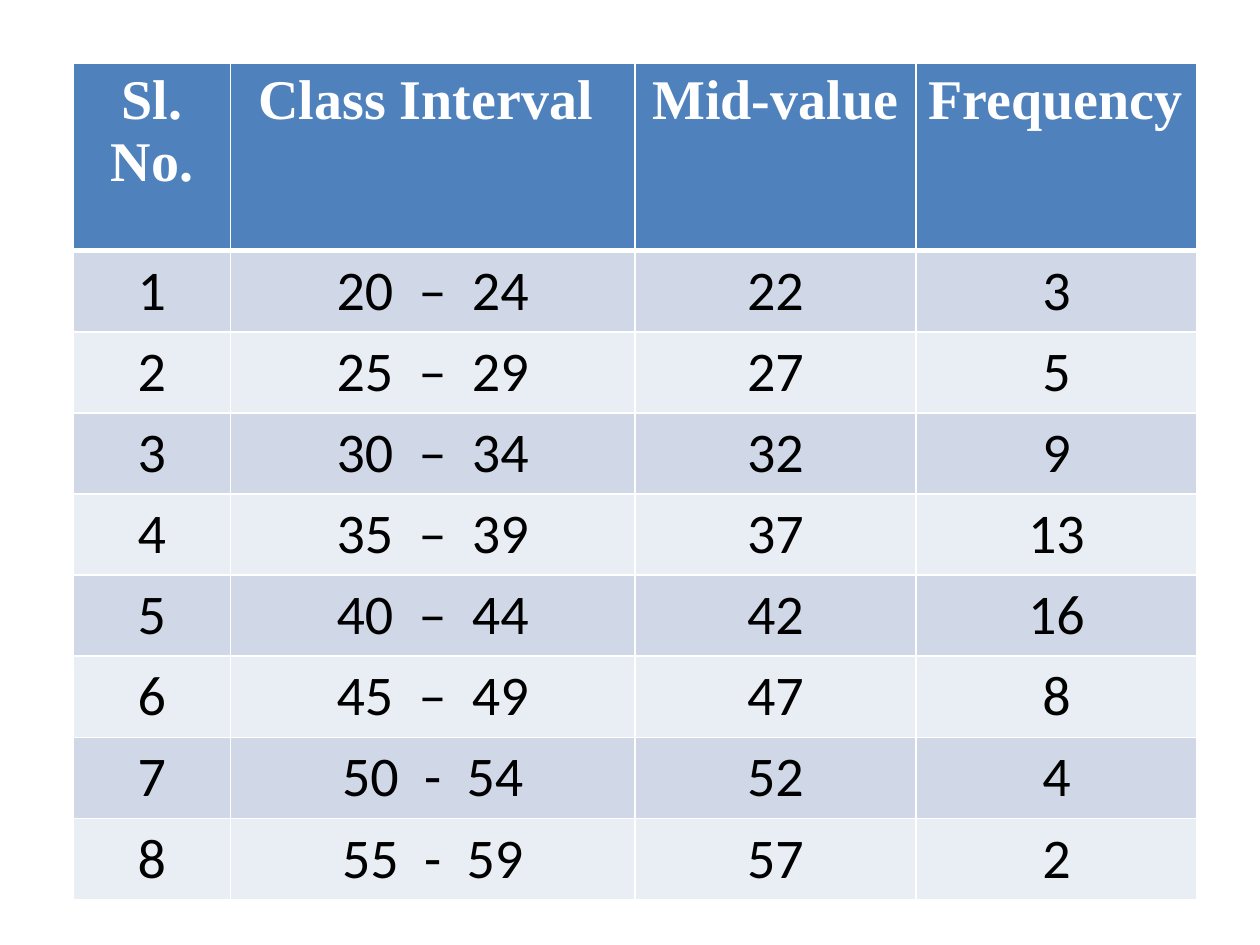
from lxml import etree
from pptx import Presentation
from pptx.dml.color import RGBColor
from pptx.enum.text import PP_ALIGN
from pptx.oxml.ns import qn
from pptx.util import Inches, Pt

CENTER, LEFT = PP_ALIGN.CENTER, PP_ALIGN.LEFT
WHITE = RGBColor(0xFF, 0xFF, 0xFF)
BLACK = RGBColor(0x00, 0x00, 0x00)
HEADER_BLUE = RGBColor(0x4F, 0x81, 0xBD)
BANDS = [RGBColor(0xD0, 0xD8, 0xE8), RGBColor(0xE9, 0xED, 0xF4)]

HEADINGS = ["Sl. No.", "Class Interval ", "Mid-value", "Frequency"]
FREQUENCIES = [3, 5, 9, 13, 16, 8, 4, 2]
FIRST_LOWER, CLASS_STEP = 20, 5
COLUMN_WIDTHS = [1.25, 3.21, 2.23, 2.23]
HEADER_HEIGHT, BODY_HEIGHT = 1.49, 0.58


def add_border(cell, side, points):
    """Draw a solid white line on one side (L, R, T or B) of a cell."""
    line = etree.SubElement(cell._tc.get_or_add_tcPr(), qn(f"a:ln{side}"), w=str(Pt(points)))
    solid = etree.SubElement(line, qn("a:solidFill"))
    etree.SubElement(solid, qn("a:srgbClr"), val=str(WHITE))


rows = [HEADINGS]
for index, frequency in enumerate(FREQUENCIES):
    lower = FIRST_LOWER + index * CLASS_STEP
    dash = "–" if lower < 50 else "-"
    interval = f"{lower}  {dash}  {lower + CLASS_STEP - 1}"
    rows.append([str(index + 1), interval, str(lower + 2), str(frequency)])

prs = Presentation()
prs.slide_width, prs.slide_height = Inches(10), Inches(7.5)
slide = prs.slides.add_slide(prs.slide_layouts[6])

frequency_table = slide.shapes.add_table(
    len(rows), len(HEADINGS), Inches(0.58), Inches(0.5),
    Inches(sum(COLUMN_WIDTHS)), Inches(HEADER_HEIGHT + BODY_HEIGHT * len(FREQUENCIES)),
).table
for column, width in zip(frequency_table.columns, COLUMN_WIDTHS):
    column.width = Inches(width)

for r, values in enumerate(rows):
    is_header = r == 0
    frequency_table.rows[r].height = Inches(HEADER_HEIGHT if is_header else BODY_HEIGHT)
    for c, value in enumerate(values):
        cell = frequency_table.cell(r, c)
        for side in "LRTB":
            under_header = (r, side) in [(0, "B"), (1, "T")]
            add_border(cell, side, 3 if under_header else 1)
        cell.fill.solid()
        cell.fill.fore_color.rgb = HEADER_BLUE if is_header else BANDS[(r - 1) % 2]

        paragraph = cell.text_frame.paragraphs[0]
        paragraph.text = value
        paragraph.alignment = LEFT if value == "Frequency" else CENTER
        font = paragraph.runs[0].font
        font.size = Pt(32)
        font.name = "Times New Roman" if is_header else "Calibri"
        font.bold = is_header
        font.color.rgb = WHITE if is_header else BLACK

prs.save("out.pptx")
